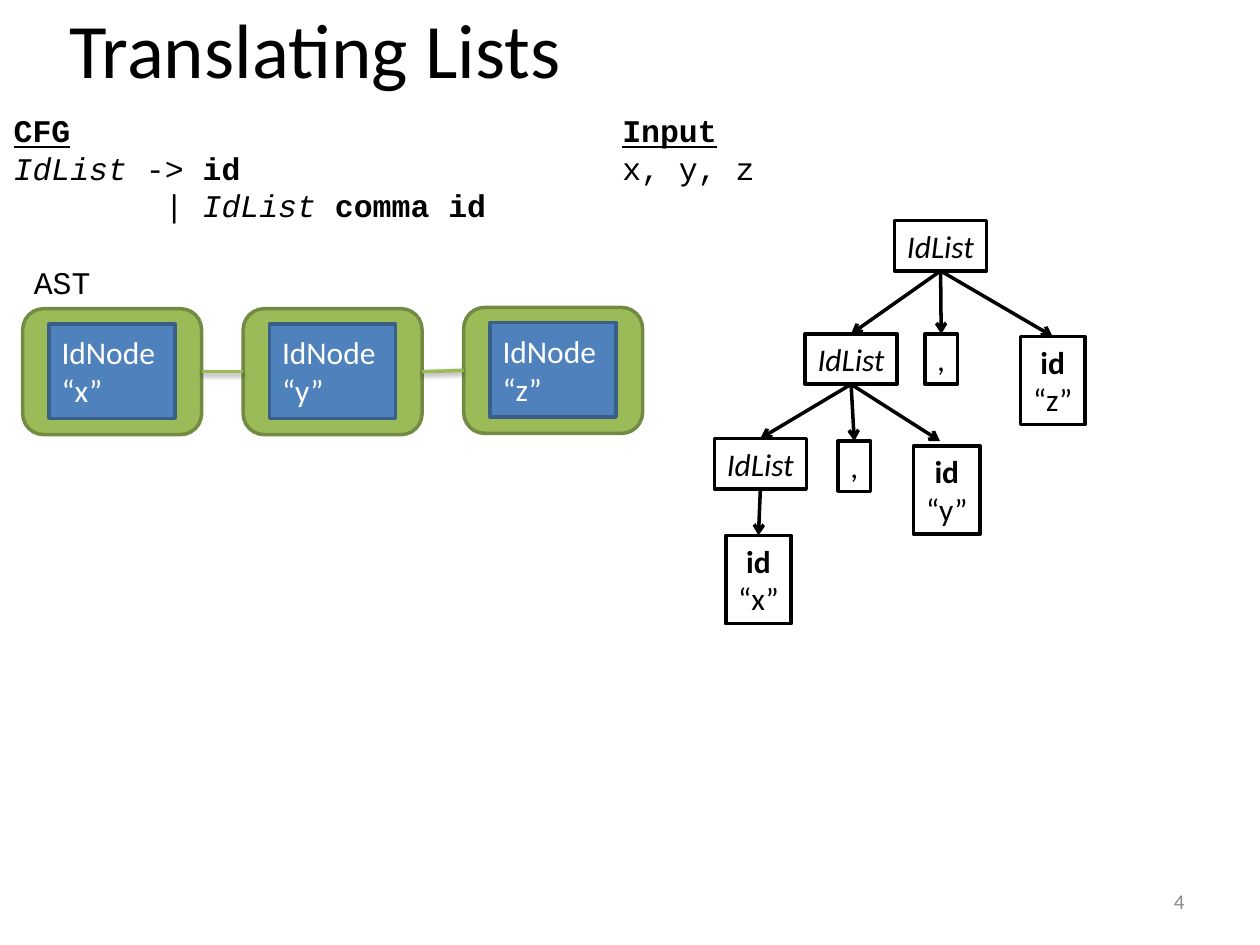
from lxml import etree
from pptx import Presentation
from pptx import util as u
from pptx.dml.color import RGBColor
from pptx.enum import shapes, text
from pptx.oxml import parse_xml
from pptx.oxml.ns import nsdecls, qn

BLACK = RGBColor(0x00, 0x00, 0x00)
WHITE = RGBColor(0xFF, 0xFF, 0xFF)
GREY = RGBColor(0x8B, 0x8B, 0x8B)
GREEN = RGBColor(0x9B, 0xBB, 0x59)
DARK_GREEN = RGBColor(0x72, 0x8A, 0x41)
BLUE = RGBColor(0x4F, 0x81, 0xBD)
DARK_BLUE = RGBColor(0x3A, 0x5F, 0x8B)

# The slide is a grid of 100 columns by 75 rows
CELL = u.Inches(0.1)
COLUMNS, ROWS = 100, 75
BODY, CODE = "Calibri", "Courier New"
CODE_INDENT = u.Pt(8 * 0.6 * 18)  # eight characters of 18 pt code

PLAIN, BOLD, ITALIC = {}, {"bold": True}, {"italic": True}
HEADING = {"bold": True, "underline": True}
TOP, LEFT, BOTTOM, RIGHT = range(4)  # connection sites of a box


def grid(*cells):
    return [round(cell * CELL) for cell in cells]


def write(shape, paragraphs, font=BODY, size=18, color=BLACK,
          align=text.PP_ALIGN.LEFT, anchor=text.MSO_ANCHOR.TOP, wrap=False):
    """Fill a shape with paragraphs, each a list of (words, format) runs."""
    frame = shape.text_frame
    frame.word_wrap = wrap
    frame.vertical_anchor = anchor
    frame.auto_size = (text.MSO_AUTO_SIZE.NONE if wrap
                       else text.MSO_AUTO_SIZE.SHAPE_TO_FIT_TEXT)
    for index, runs in enumerate(paragraphs):
        paragraph = frame.add_paragraph() if index else frame.paragraphs[0]
        paragraph.alignment = align
        for words, style in runs:
            run = paragraph.add_run()
            run.text = words
            run.font.color.rgb = color
            values = {"name": font, "size": u.Pt(size), **style}
            for name, value in values.items():
                setattr(run.font, name, value)


def add_text(slide, place, paragraphs, **options):
    box = slide.shapes.add_textbox(*grid(*place))
    write(box, paragraphs, **options)
    return box


def add_box(slide, place, fill, line, kind=shapes.MSO_SHAPE.RECTANGLE):
    box = slide.shapes.add_shape(kind, *grid(*place))
    box.shadow.inherit = False
    box.fill.solid()
    box.fill.fore_color.rgb = fill
    box.line.color.rgb = line
    box.line.width = u.Pt(2)
    return box


def add_link(slide, start, start_site, end, end_site, color):
    """Join two boxes with a line that has an empty effect list."""
    link = slide.shapes.add_connector(shapes.MSO_CONNECTOR.STRAIGHT, 0, 0, 0, 0)
    link.begin_connect(start, start_site)
    link.end_connect(end, end_site)
    link.line.color.rgb = color
    link.line.width = u.Pt(2)
    effects = etree.SubElement(link._element.spPr, qn("a:effectLst"))
    return link, effects


def add_branch(slide, parent, child):
    link, _ = add_link(slide, parent, BOTTOM, child, TOP, BLACK)
    etree.SubElement(link.line._get_or_add_ln(), qn("a:tailEnd"), type="arrow")
    return link


def add_list_link(slide, start, end):
    _, effects = add_link(slide, start, RIGHT, end, LEFT, GREEN)
    effects.append(parse_xml(
        f'<a:outerShdw {nsdecls("a")} blurRad="{u.Pt(3.1)}" dist="{u.Pt(1.6)}" '
        'dir="5400000" rotWithShape="0"><a:srgbClr val="000000">'
        '<a:alpha val="38000"/></a:srgbClr></a:outerShdw>'))


def add_list_node(slide, left, top, name):
    """Green list node that holds a blue identifier node."""
    outer = add_box(slide, (left, top, 14.2, 10), GREEN, DARK_GREEN,
                    shapes.MSO_SHAPE.ROUNDED_RECTANGLE)
    inner = add_box(slide, (left + 2.1, top + 1.2, 10, 7.5), BLUE, DARK_BLUE)
    write(inner, [[("IdNode", PLAIN)], [(f"“{name}”", PLAIN)]], color=WHITE,
          anchor=text.MSO_ANCHOR.MIDDLE, wrap=True)
    return outer


def add_tree_node(slide, left, top, width, paragraphs, **options):
    height = 4 if len(paragraphs) == 1 else 7
    box = add_box(slide, (left, top, width, height), WHITE, BLACK)
    write(box, paragraphs, **options)
    return box


def add_rule(slide, left, top):
    return add_tree_node(slide, left, top, 7.3, [[("IdList", ITALIC)]])


def add_comma(slide, left, top):
    return add_tree_node(slide, left, top, 2.6, [[(",", PLAIN)]])


def add_identifier(slide, left, top, width, name):
    box = add_tree_node(slide, left, top, width,
                        [[("id", BOLD)], [(f"“{name}”", PLAIN)]],
                        align=text.PP_ALIGN.CENTER)
    # Narrow side margins keep the quoted name on one line
    box.text_frame.margin_left = box.text_frame.margin_right = u.Inches(0.02)
    # The box keeps its width instead of shrinking to the text
    box.text_frame.auto_size = text.MSO_AUTO_SIZE.NONE
    box.text_frame.word_wrap = True
    return box


def add_parse_tree(slide):
    root = add_rule(slide, 71, 17.5)
    middle = add_rule(slide, 63.9, 26.5)
    lowest = add_rule(slide, 56.7, 34.8)
    upper_comma = add_comma(slide, 73.4, 26.5)
    lower_comma = add_comma(slide, 66.5, 35)
    x = add_identifier(slide, 57.6, 42.5, 5.2, "x")
    y = add_identifier(slide, 72.5, 35.4, 5.3, "y")
    z = add_identifier(slide, 81, 26.7, 5.1, "z")
    children = [(root, (middle, upper_comma, z)),
                (middle, (lowest, lower_comma)),
                (lowest, (x,))]
    for parent, nodes in children:
        for node in nodes:
            add_branch(slide, parent, node)
    # This arrow stops just above and left of its box
    branch = add_branch(slide, middle, y)
    branch.end_x, branch.end_y = grid(74.6, 35)


def main():
    presentation = Presentation()
    presentation.slide_width, presentation.slide_height = grid(COLUMNS, ROWS)
    slide = presentation.slides.add_slide(presentation.slide_layouts[5])

    # Title
    title = slide.shapes.title
    title.left, title.top, title.width, title.height = grid(-20, -2.5, 90, 12.5)
    write(title, [[("Translating Lists", PLAIN)]], size=44, wrap=True,
          align=text.PP_ALIGN.CENTER, anchor=text.MSO_ANCHOR.MIDDLE)

    # Grammar and input
    grammar = add_text(slide, (0.1, 8.3, 39.5, 10), [
        [("CFG", HEADING)],
        [("IdList", ITALIC), (" -> ", PLAIN), ("id", BOLD)],
        [("| ", PLAIN), ("IdList ", ITALIC), ("comma id", BOLD)],
    ], font=CODE)
    alternative = grammar.text_frame.paragraphs[-1]
    alternative._p.get_or_add_pPr().set("marL", str(int(CODE_INDENT)))
    add_text(slide, (48.4, 8.3, 12.5, 7),
             [[("Input", HEADING)], [("x, y, z", PLAIN)]], font=CODE)

    # Syntax tree as a linked list
    add_text(slide, (1.7, 20.4, 6.5, 4), [[("AST", PLAIN)]], font=CODE)
    nodes = [add_list_node(slide, 1.8 + 17.5 * index, top, name)
             for index, (name, top) in enumerate(
                 [("x", 24.5), ("y", 24.5), ("z", 24.4)])]
    for start, end in zip(nodes, nodes[1:]):
        add_list_link(slide, start, end)

    add_parse_tree(slide)

    # Slide number
    add_text(slide, (71.7, 69.5, 23.3, 4), [[("4", PLAIN)]], size=12,
             color=GREY, align=text.PP_ALIGN.RIGHT,
             anchor=text.MSO_ANCHOR.MIDDLE, wrap=True)

    presentation.save("out.pptx")


if __name__ == "__main__":
    main()
